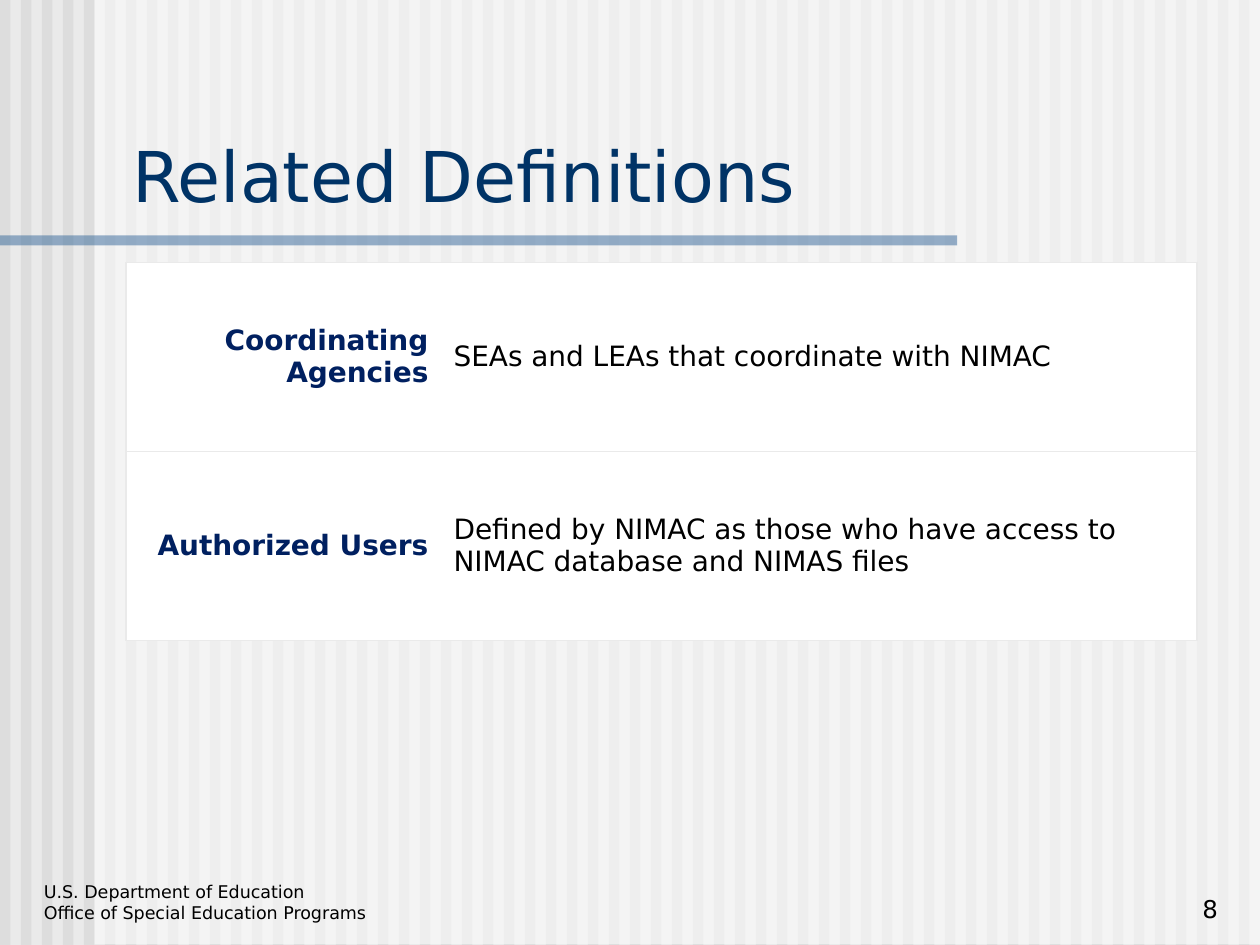
"""Build the Related Definitions slide with a striped background and a two-row table."""
from dataclasses import dataclass

from lxml.etree import SubElement
from pptx import Presentation
from pptx.dml.color import RGBColor
from pptx.enum.shapes import MSO_SHAPE
from pptx.enum.text import MSO_ANCHOR, PP_ALIGN
from pptx.oxml.ns import qn
from pptx.util import Pt


@dataclass(frozen=True)
class Theme:
    font: str = "DejaVu Sans"
    background: str = "EAEAEA"
    stripe: str = "DDDDDD"
    white: str = "FFFFFF"
    accent: str = "336699"
    title: str = "003366"
    term: str = "002060"
    body: str = "000000"
    title_size: int = 40
    table_size: int = 16
    number_size: int = 14
    footer_size: int = 10


theme = Theme()


def add_band(left, top, width, height, color, opacity=100):
    band = slide.shapes.add_shape(MSO_SHAPE.RECTANGLE, Pt(left), Pt(top), Pt(width), Pt(height))
    band.shadow.inherit = False
    band.line.fill.background()
    band.fill.solid()
    band.fill.fore_color.rgb = RGBColor.from_string(color)
    if opacity < 100:
        srgb = band.fill._xPr.find(qn("a:solidFill")).find(qn("a:srgbClr"))
        SubElement(srgb, qn("a:alpha"), val=str(opacity * 1000))


def write(frame, text, size, color, align=PP_ALIGN.LEFT, bold=False):
    frame.text = text
    frame.word_wrap = True
    for paragraph in frame.paragraphs:
        paragraph.alignment = align
        for run in paragraph.runs:
            run.font.name = theme.font
            run.font.size = Pt(size)
            run.font.bold = bold
            run.font.color.rgb = RGBColor.from_string(color)


presentation = Presentation()
presentation.slide_width = Pt(720)
presentation.slide_height = Pt(540)
slide = presentation.slides.add_slide(presentation.slide_layouts[6])
slide.background.fill.solid()
slide.background.fill.fore_color.rgb = RGBColor.from_string(theme.background)

for stripe_left in range(0, 720, 12):
    add_band(stripe_left, 0, 6, 540, theme.stripe)
add_band(54, -0.5, 666, 540, theme.white, 50)
add_band(0, 134.5, 547, 5.75, theme.accent, 50)

captions = [
    ("U.S. Department of Education\nOffice of Special Education Programs",
     (18, 489, 240, 42), theme.footer_size, theme.body, PP_ALIGN.LEFT),
    ("Related Definitions", (68.5, 72, 643, 55.5), theme.title_size, theme.title, PP_ALIGN.LEFT),
    ("8", (553, 495.5, 150, 36), theme.number_size, theme.body, PP_ALIGN.RIGHT),
]
for text, place, size, color, align in captions:
    caption = slide.shapes.add_textbox(*map(Pt, place)).text_frame
    caption.vertical_anchor = MSO_ANCHOR.BOTTOM
    write(caption, text, size, color, align)

definitions = [
    ("Coordinating Agencies", "SEAs and LEAs that coordinate with NIMAC"),
    ("Authorized Users",
     "Defined by NIMAC as those who have access to NIMAC database and NIMAS files"),
]
table = slide.shapes.add_table(2, 2, Pt(72), Pt(150), Pt(612), Pt(216)).table
table.first_row = False
table.horz_banding = False
table.columns[0].width = Pt(180)
table.columns[1].width = Pt(432)

for row, definition in enumerate(definitions):
    for column, text in enumerate(definition):
        is_term = column == 0
        cell = table.cell(row, column)
        cell.vertical_anchor = MSO_ANCHOR.MIDDLE
        write(cell.text_frame, text, theme.table_size,
              theme.term if is_term else theme.body,
              PP_ALIGN.RIGHT if is_term else PP_ALIGN.LEFT, is_term)
        inner_side = "a:lnR" if is_term else "a:lnL"
        properties = cell._tc.get_or_add_tcPr()
        for side in ("a:lnL", "a:lnR", "a:lnT", "a:lnB"):
            border = SubElement(properties, qn(side), w=str(Pt(1)))
            if side == inner_side:
                SubElement(border, qn("a:noFill"))
            else:
                line_fill = SubElement(border, qn("a:solidFill"))
                SubElement(line_fill, qn("a:srgbClr"), val=theme.background)
        cell.fill.solid()
        cell.fill.fore_color.rgb = RGBColor.from_string(theme.white)

presentation.save("out.pptx")
